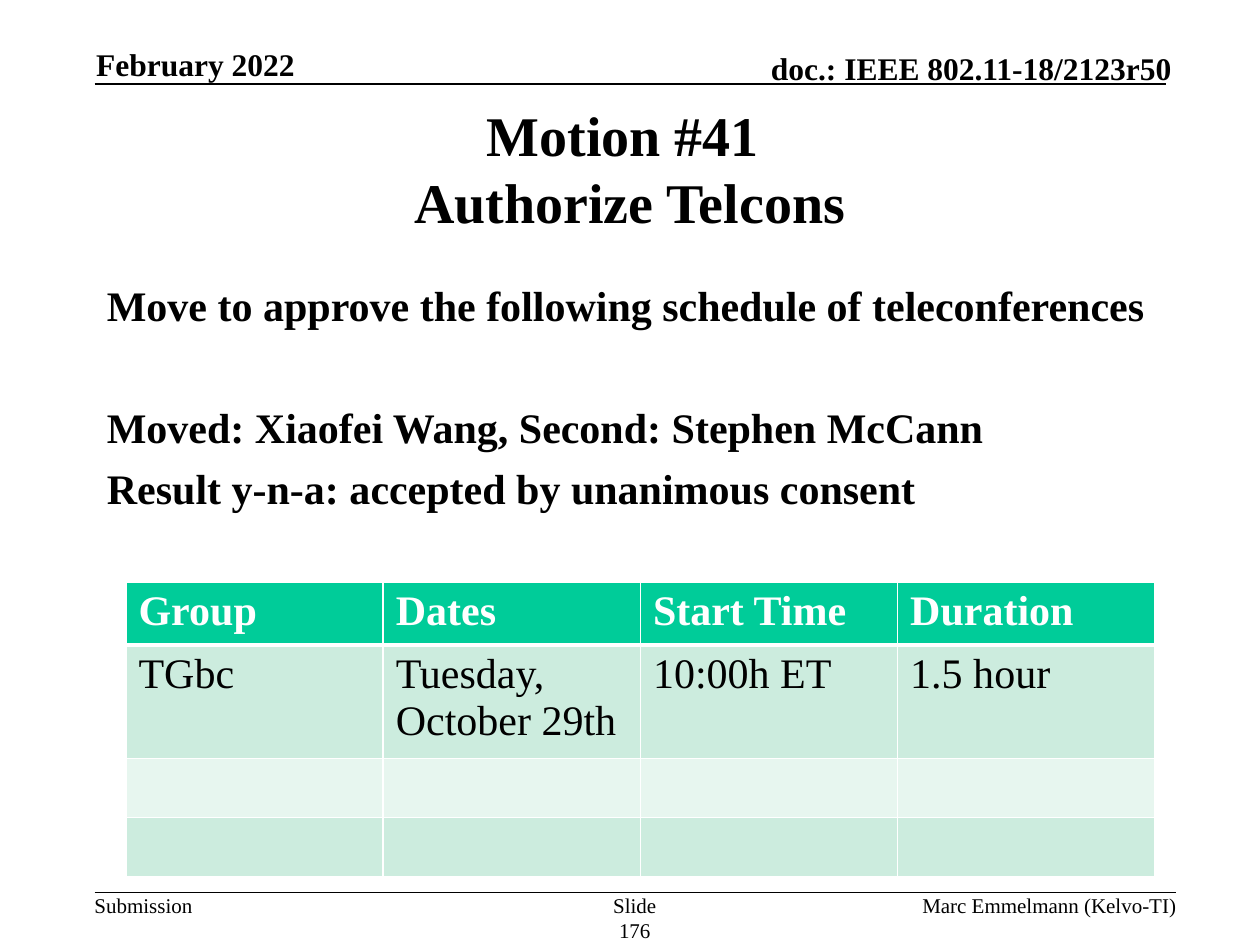
from dataclasses import dataclass

from lxml.etree import SubElement
from pptx import Presentation
from pptx.dml.color import RGBColor
from pptx.enum.shapes import MSO_CONNECTOR
from pptx.enum.text import MSO_ANCHOR, PP_ALIGN
from pptx.oxml.ns import qn
from pptx.util import Pt

BLACK = RGBColor(0x00, 0x00, 0x00)
WHITE = RGBColor(0xFF, 0xFF, 0xFF)
GREEN = RGBColor(0x00, 0xCC, 0x99)
BAND_DARK = RGBColor(0xCC, 0xEC, 0xDE)
BAND_LIGHT = RGBColor(0xE7, 0xF6, 0xEF)
FONT = "Times New Roman"
HANGING = Pt(27)


@dataclass
class Label:
    text: str
    left: float
    top: float
    width: float
    height: float
    size: float = 12
    bold: bool = False
    align: PP_ALIGN = PP_ALIGN.LEFT
    anchor: MSO_ANCHOR = MSO_ANCHOR.TOP
    inset: tuple[float, float] = (0, 0)
    wrap: bool = True


@dataclass
class Rule:
    left: float
    right: float
    y: float


RULES = [Rule(54, 666, 48), Rule(54, 672, 510)]

LABELS = [
    Label("Submission", 54, 510, 56, 14.5, wrap=False),
    Label("doc.: IEEE 802.11-18/2123r50", 394, 28, 275.5, 21.5, 18, True,
          PP_ALIGN.RIGHT, MSO_ANCHOR.BOTTOM),
    Label("Motion #41 \vAuthorize Telcons", 54, 54, 612, 83.5, 32, True,
          PP_ALIGN.CENTER, MSO_ANCHOR.MIDDLE, (7.2, 3.6)),
    Label("Slide 176", 342, 510, 41.5, 29, align=PP_ALIGN.CENTER),
    Label("Marc Emmelmann (Kelvo-TI)", 422, 510, 250.3, 14.5, align=PP_ALIGN.RIGHT),
    Label("February 2022", 55, 26, 147.5, 21.5, 18, True, anchor=MSO_ANCHOR.BOTTOM),
]

MOTION = Label(
    "Move to approve the following schedule of teleconferences\n"
    "Moved: Xiaofei Wang, Second: Stephen McCann\n"
    "Result y-n-a: accepted by unanimous consent",
    54, 156, 612, 144, 24, True, inset=(7.2, 3.6))
MOTION_GAPS = (0, 41, 6)

TELCONS = [
    ("Group", "Dates", "Start Time", "Duration"),
    ("TGbc", "Tuesday, October 29th", "10:00h ET", "1.5 hour"),
    ("", "", "", ""),
    ("", "", "", ""),
]
ROW_HEIGHTS = (33.8, 60.4, 33.8, 33.8)
ROW_FILLS = (GREEN, BAND_DARK, BAND_LIGHT, BAND_DARK)


def style_runs(tf, size: float, bold: bool, color: RGBColor) -> None:
    for p in tf.paragraphs:
        for r in p.runs:
            r.font.name = FONT
            r.font.size = Pt(size)
            r.font.bold = bold
            r.font.color.rgb = color


def add_label(slide, label: Label):
    sp = slide.shapes.add_textbox(Pt(label.left), Pt(label.top),
                                  Pt(label.width), Pt(label.height))
    tf = sp.text_frame
    tf.word_wrap = label.wrap
    tf.vertical_anchor = label.anchor
    tf.margin_left = tf.margin_right = Pt(label.inset[0])
    tf.margin_top = tf.margin_bottom = Pt(label.inset[1])
    tf.text = label.text
    for p in tf.paragraphs:
        p.alignment = label.align
    style_runs(tf, label.size, label.bold, BLACK)
    return tf


def add_motion(slide) -> None:
    tf = add_label(slide, MOTION)
    for p, gap in zip(tf.paragraphs, MOTION_GAPS):
        p.space_before = Pt(gap)
        pPr = p._p.get_or_add_pPr()
        pPr.set("marL", str(HANGING))
        pPr.set("indent", str(-HANGING))


def add_rule(slide, rule: Rule) -> None:
    line = slide.shapes.add_connector(MSO_CONNECTOR.STRAIGHT, Pt(rule.left), Pt(rule.y),
                                      Pt(rule.right), Pt(rule.y))
    line.line.color.rgb = BLACK
    line.line.width = Pt(1)
    SubElement(line._element.spPr, qn("a:effectLst"))


def set_borders(cell, bottom: float, top: float) -> None:
    """Draw white borders, 1 pt at the sides; they must precede the fill."""
    tcPr = cell._tc.get_or_add_tcPr()
    for side, width in (("L", 1), ("R", 1), ("T", top), ("B", bottom)):
        ln = SubElement(tcPr, qn(f"a:ln{side}"), w=str(Pt(width)))
        fill = SubElement(ln, qn("a:solidFill"))
        SubElement(fill, qn("a:srgbClr"), val=str(WHITE))


def add_telcon_table(slide) -> None:
    table = slide.shapes.add_table(len(TELCONS), len(TELCONS[0]), Pt(72), Pt(332.5),
                                   Pt(588), Pt(sum(ROW_HEIGHTS))).table
    for i, texts in enumerate(TELCONS):
        table.rows[i].height = Pt(ROW_HEIGHTS[i])
        header = i == 0
        for j, text in enumerate(texts):
            cell = table.cell(i, j)
            cell.text = text
            style_runs(cell.text_frame, 24, header, WHITE if header else BLACK)
            set_borders(cell, bottom=3 if header else 1, top=3 if i == 1 else 1)
            cell.fill.solid()
            cell.fill.fore_color.rgb = ROW_FILLS[i]


def main() -> None:
    prs = Presentation()
    prs.slide_width, prs.slide_height = Pt(720), Pt(540)
    slide = prs.slides.add_slide(prs.slide_layouts[6])
    for rule in RULES:
        add_rule(slide, rule)
    for label in LABELS:
        add_label(slide, label)
    add_motion(slide)
    add_telcon_table(slide)
    prs.save("out.pptx")


if __name__ == "__main__":
    main()
